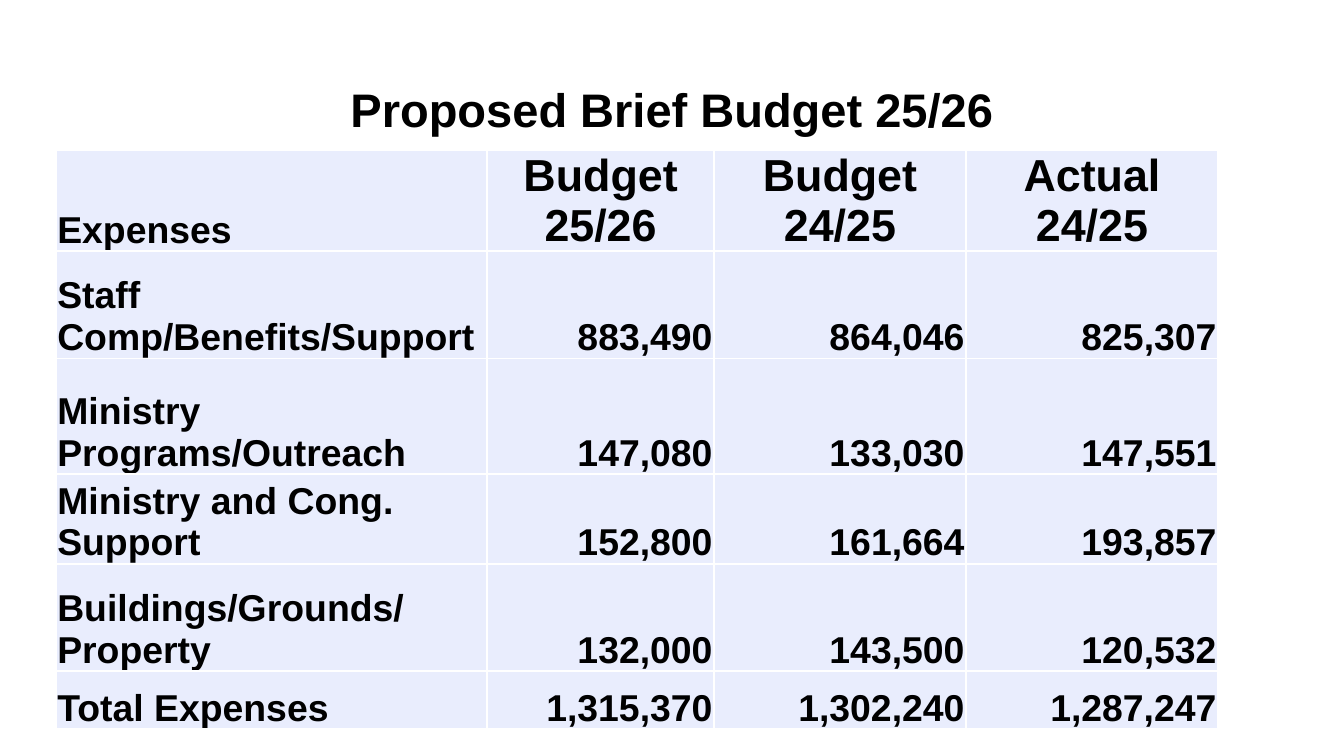
"""Build the brief budget slide with its title and expense table."""
from dataclasses import dataclass

import lxml.etree
import pptx
import pptx.dml.color
import pptx.enum.text
import pptx.oxml.ns
import pptx.util

Pt = pptx.util.Pt
Align = pptx.enum.text.PP_ALIGN
Anchor = pptx.enum.text.MSO_ANCHOR

BLACK = pptx.dml.color.RGBColor(0x00, 0x00, 0x00)
WHITE = pptx.dml.color.RGBColor(0xFF, 0xFF, 0xFF)
LAVENDER = pptx.dml.color.RGBColor(0xE9, 0xED, 0xFD)
FONT = "Arial"
BODY_SIZE = 20
HEADER_SIZE = 24
COLUMN_WIDTHS = (231, 121.5, 135, 135)


@dataclass(frozen=True)
class BudgetRow:
    label: str
    values: tuple[str, str, str]
    height: float


HEADER = BudgetRow("Expenses", ("Budget 25/26", "Budget 24/25", "Actual 24/25"), 54)
EXPENSES = (
    BudgetRow("Staff Comp/Benefits/Support", ("883,490", "864,046", "825,307"), 57.5),
    BudgetRow("Ministry Programs/Outreach", ("147,080", "133,030", "147,551"), 62),
    BudgetRow("Ministry and Cong. Support", ("152,800", "161,664", "193,857"), 48),
    BudgetRow("Buildings/Grounds/ Property", ("132,000", "143,500", "120,532"), 57.5),
    BudgetRow("Total Expenses", ("1,315,370", "1,302,240", "1,287,247"), 31),
)


def add_text(paragraph, text: str, size: float, alignment) -> None:
    paragraph.alignment = alignment
    run = paragraph.add_run()
    run.text = text
    run.font.name = FONT
    run.font.size = Pt(size)
    run.font.bold = True
    run.font.color.rgb = BLACK


def add_borders(cell) -> None:
    properties = cell._tc.get_or_add_tcPr()
    qualified = pptx.oxml.ns.qn
    for side in ("lnL", "lnR", "lnT", "lnB"):
        line = lxml.etree.SubElement(properties, qualified(f"a:{side}"), w=str(Pt(1)))
        fill = lxml.etree.SubElement(line, qualified("a:solidFill"))
        lxml.etree.SubElement(fill, qualified("a:srgbClr"), val=str(WHITE))


def fill_cell(cell, text: str, size: float, alignment) -> None:
    add_borders(cell)
    cell.fill.solid()
    cell.fill.fore_color.rgb = LAVENDER
    cell.vertical_anchor = Anchor.BOTTOM
    cell.margin_left = cell.margin_right = cell.margin_top = Pt(0.7)
    cell.margin_bottom = Pt(0)
    add_text(cell.text_frame.paragraphs[0], text, size, alignment)


def add_title(slide) -> None:
    title = slide.shapes.title
    title.left, title.top = Pt(24.5), Pt(35.5)
    title.width, title.height = Pt(671), Pt(45)
    frame = title.text_frame
    frame.auto_size = pptx.enum.text.MSO_AUTO_SIZE.NONE
    frame.vertical_anchor = Anchor.MIDDLE
    frame.margin_left = frame.margin_right = Pt(7.2)
    frame.margin_top = frame.margin_bottom = Pt(7.2)
    add_text(frame.paragraphs[0], "Proposed Brief Budget 25/26", 25.2, Align.CENTER)


def add_budget_table(slide) -> None:
    rows = (HEADER, *EXPENSES)
    table = slide.shapes.add_table(
        len(rows), len(COLUMN_WIDTHS), Pt(30), Pt(80.3),
        Pt(sum(COLUMN_WIDTHS)), Pt(sum(row.height for row in rows)),
    ).table
    for column, width in zip(table.columns, COLUMN_WIDTHS):
        column.width = Pt(width)
    for row_index, row in enumerate(rows):
        table.rows[row_index].height = Pt(row.height)
        fill_cell(table.cell(row_index, 0), row.label, BODY_SIZE, Align.LEFT)
        is_header = row is HEADER
        size = HEADER_SIZE if is_header else BODY_SIZE
        alignment = Align.CENTER if is_header else Align.RIGHT
        for column_index, value in enumerate(row.values, start=1):
            cell = table.cell(row_index, column_index)
            fill_cell(cell, value, size, alignment)
            if value.startswith("Budget"):
                properties = cell.text_frame.paragraphs[0]._p.get_or_add_pPr()
                properties.set("indent", str(Pt(-20)))


def main() -> None:
    presentation = pptx.Presentation()
    presentation.slide_width, presentation.slide_height = Pt(720), Pt(405)
    slide = presentation.slides.add_slide(presentation.slide_layouts[5])
    add_title(slide)
    add_budget_table(slide)
    presentation.save("out.pptx")


if __name__ == "__main__":
    main()
